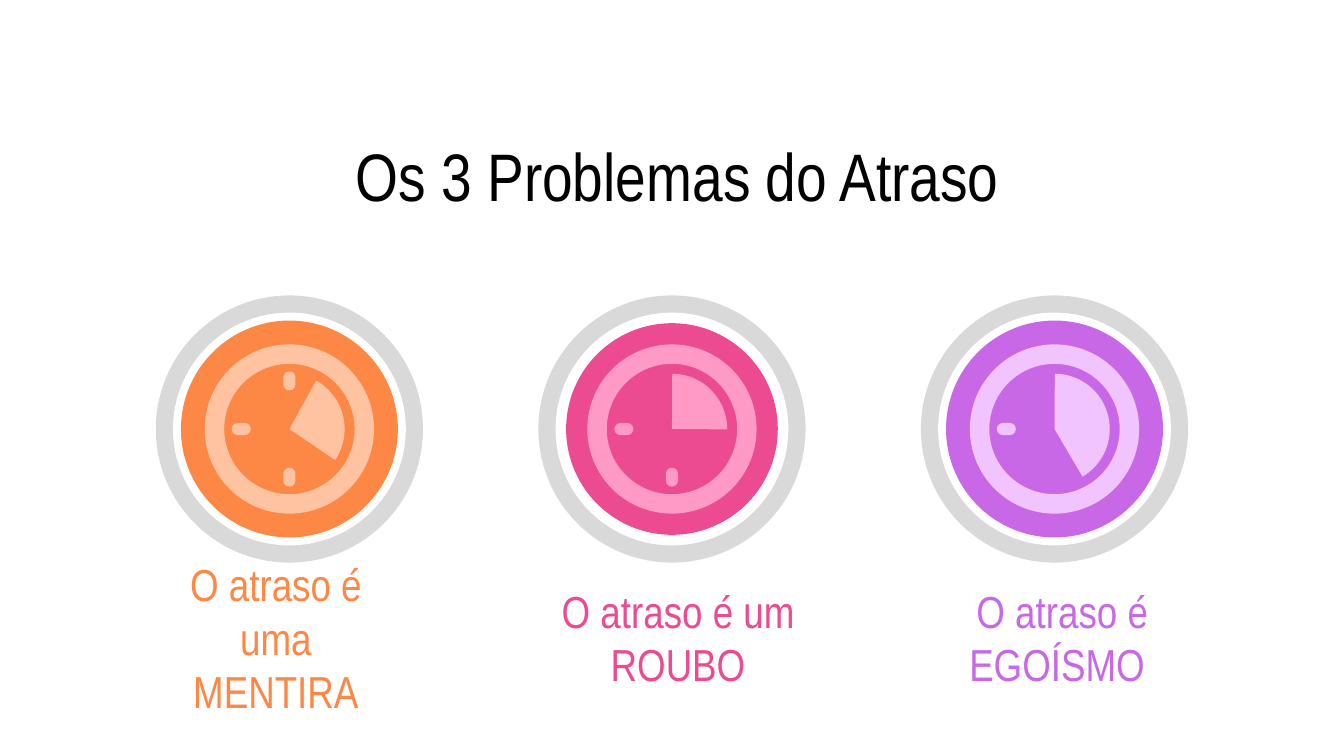
from pptx import Presentation
from pptx.dml.color import RGBColor as Rgb
from pptx.enum.shapes import MSO_SHAPE as Kind
from pptx.enum.text import MSO_ANCHOR as Anchor, MSO_AUTO_SIZE as Fit, PP_ALIGN as Align
from pptx.util import Cm, Pt

FONT = "Arial Narrow"
HUES = {
    "black": "000000", "white": "FFFFFF", "gray": "D9D9D9",
    "orange": "FD8845", "peach": "FFC3A1",
    "pink": "EC4A91", "rose": "FF99C5",
    "purple": "C868E6", "lilac": "F1C4FF",
}
FIRST_X, STEP, MID_Y = 5.47, 7.23, 8.11
REACH = 0.91  # from the centre of a clock to a tick
TICKS = {"top": (0, -REACH), "left": (-REACH, 0), "bottom": (0, REACH)}

# hue, tint, face size, start and end angle of the wedge, ticks,
# caption, its left edge and width
CLOCKS = [
    ("orange", "peach", 4.1, 299.07, 34.2, ("top", "left", "bottom"),
     "O atraso é uma MENTIRA", 2.69, 5.05),
    ("pink", "rose", 4, 270.36, 0.39, ("left", "bottom"),
     "O atraso é um ROUBO", 10.29, 5.05),
    ("purple", "lilac", 4.1, 270.36, 59.51, ("left",),
     "O atraso é EGOÍSMO ", 17.88, 4.39),
]


def write(box, text, size=24, hue="black"):
    """Put centred text in a box or placeholder."""
    frame = box.text_frame
    frame.word_wrap = True
    frame.auto_size = Fit.NONE
    frame.vertical_anchor = Anchor.MIDDLE
    frame.margin_left = frame.margin_right = Cm(0.25)
    frame.margin_top = frame.margin_bottom = Cm(0.25)
    line = frame.paragraphs[0]
    line.alignment = Align.CENTER
    run = line.add_run()
    run.text = text
    run.font.name = FONT
    run.font.size = Pt(size)
    run.font.color.rgb = Rgb.from_string(HUES[hue])


def add_part(group, kind, x, y, wide, high, hue, adjust=()):
    """Add a plain filled shape centred on x, y."""
    part = group.shapes.add_shape(
        kind, Cm(x - wide / 2), Cm(y - high / 2), Cm(wide), Cm(high))
    part.shadow.inherit = False
    part.fill.solid()
    part.fill.fore_color.rgb = Rgb.from_string(HUES[hue])
    part.line.fill.background()
    for i, value in enumerate(adjust):
        part.adjustments[i] = value


def add_clock(slide, x, hue, tint, face, start, end, ticks):
    group = slide.shapes.add_group_shape()
    for size, shade in ((5.05, "gray"), (4.4, "white"), (face, hue)):
        add_part(group, Kind.OVAL, x, MID_Y, size, size, shade)
    add_part(group, Kind.DONUT, x, MID_Y, 3.2, 3.2, tint, [0.115])
    for side in ticks:
        dx, dy = TICKS[side]
        wide, high = (0.36, 0.23) if dx else (0.23, 0.36)
        add_part(group, Kind.ROUNDED_RECTANGLE, x + dx, MID_Y + dy,
                 wide, high, tint, [0.5])
    # A degree is 60000 units, and an adjustment of 1 is 100000
    add_part(group, Kind.PIE, x, MID_Y, 2.09, 2.09, tint,
             [start * 0.6, end * 0.6])


def add_title(slide, text):
    title = slide.shapes.title
    title.left, title.top = Cm(1.37), Cm(2.9)
    title.width, title.height = Cm(22.86), Cm(0.79)
    write(title, text, size=36)


def add_caption(slide, text, left, wide, hue):
    box = slide.shapes.add_textbox(Cm(left), Cm(11.56), Cm(wide), Cm(0.97))
    write(box, text, hue=hue)


def main():
    deck = Presentation()
    deck.slide_width, deck.slide_height = Cm(25.4), Cm(14.29)
    slide = deck.slides.add_slide(deck.slide_layouts[5])
    add_title(slide, "Os 3 Problemas do Atraso")
    for i, (hue, tint, face, start, end, ticks, text, left, wide) in enumerate(CLOCKS):
        add_clock(slide, FIRST_X + i * STEP, hue, tint, face, start, end, ticks)
        add_caption(slide, text, left, wide, hue)
    deck.save("out.pptx")


if __name__ == "__main__":
    main()
